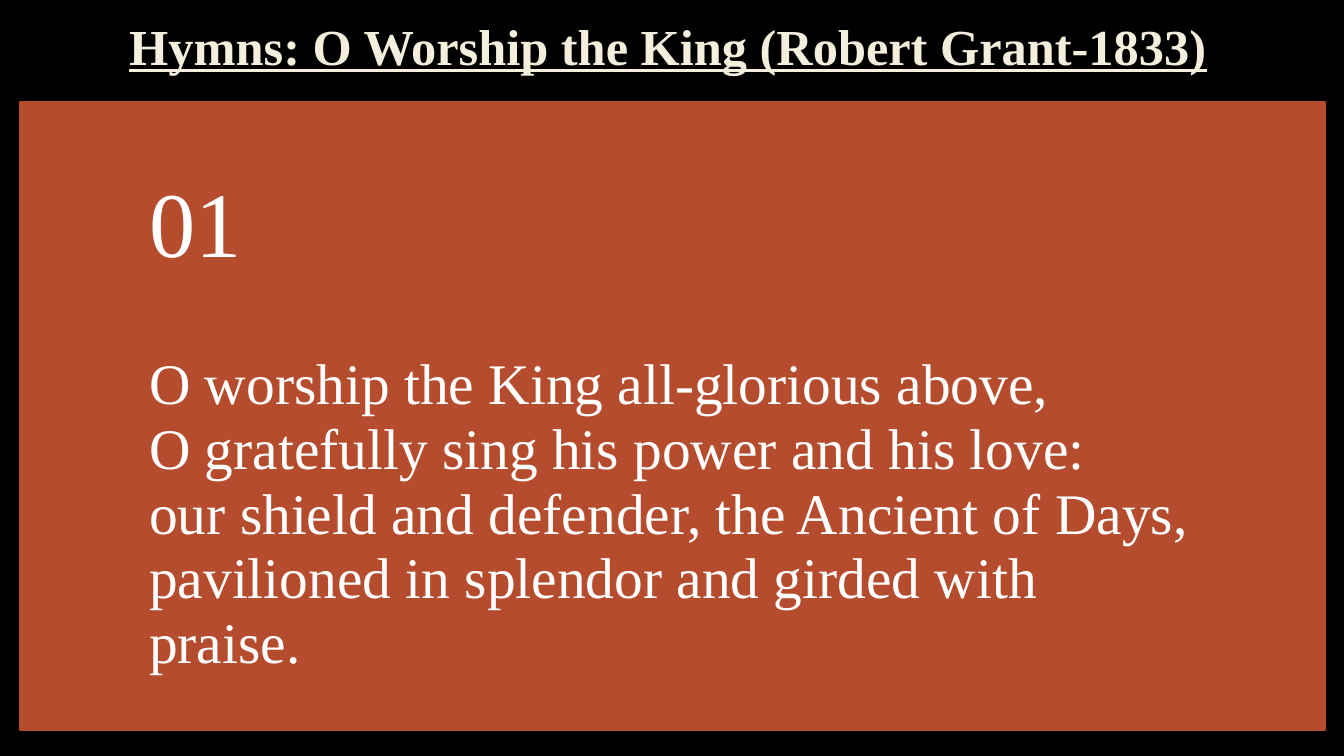
from dataclasses import dataclass

from pptx import Presentation
from pptx.dml.color import RGBColor
from pptx.enum.shapes import MSO_SHAPE
from pptx.enum.text import MSO_ANCHOR, PP_ALIGN
from pptx.util import Inches, Pt

RECTANGLE = MSO_SHAPE.RECTANGLE
TOP, MIDDLE = MSO_ANCHOR.TOP, MSO_ANCHOR.MIDDLE
LEFT, CENTER = PP_ALIGN.LEFT, PP_ALIGN.CENTER

SLIDE_W, SLIDE_H = 13.33, 7.5
PANEL_X, PANEL_Y, PANEL_W, PANEL_H = 0.2, 1.01, 12.94, 6.23
NUMBER_H = PANEL_H * 0.4
VERSE_H = PANEL_H - NUMBER_H
SIDE_INSET = 1.28

TITLE = "Hymns: O Worship the King (Robert Grant-1833)"
VERSE_NUMBER = "01"
VERSE = "\v".join([
    "O worship the King all-glorious above,",
    "O gratefully sing his power and his love:",
    "our shield and defender, the Ancient of Days,",
    "pavilioned in splendor and girded with praise.",
])


@dataclass(frozen=True)
class Theme:
    background: RGBColor = RGBColor.from_string("000000")
    panel: RGBColor = RGBColor.from_string("B54C2D")
    title: RGBColor = RGBColor.from_string("F4EEDC")
    text: RGBColor = RGBColor.from_string("FFFFFF")
    font: str = "Times New Roman"
    title_size: int = 36
    number_size: int = 66
    verse_size: int = 41


THEME = Theme()


def set_all(target, values):
    for name, value in values.items():
        setattr(target, name, value)


def add_panel(shapes, x, y, w, h):
    s = shapes.add_shape(RECTANGLE, Inches(x), Inches(y), Inches(w), Inches(h))
    s.shadow.inherit = False
    s.fill.solid()
    s.fill.fore_color.rgb = THEME.panel
    s.line.color.rgb = THEME.panel
    s.line.width = Pt(1.25)


def add_text(shapes, text, box, size, color, insets, anchor=MIDDLE,
             align=LEFT, spacing=0.9, **font):
    """Add one paragraph; box is x, y, w, h and insets are l, t, r, b in inches."""
    s = shapes.add_textbox(*map(Inches, box))
    tf = s.text_frame
    sides = ("margin_left", "margin_top", "margin_right", "margin_bottom")
    set_all(tf, dict(zip(sides, map(Inches, insets))))
    set_all(tf, {"word_wrap": True, "vertical_anchor": anchor})
    p = tf.paragraphs[0]
    p.text = text
    set_all(p, {"alignment": align, "line_spacing": spacing})
    for r in p.runs:
        set_all(r.font, {"name": THEME.font, "size": Pt(size), **font})
        r.font.color.rgb = color


def main():
    prs = Presentation()
    prs.slide_width, prs.slide_height = Inches(SLIDE_W), Inches(SLIDE_H)
    slide = prs.slides.add_slide(prs.slide_layouts[6])
    slide.background.fill.solid()
    slide.background.fill.fore_color.rgb = THEME.background

    add_text(slide.shapes, TITLE, (0.11, 0.09, 13.03, 0.79), THEME.title_size,
             THEME.title, (0.1, 0.05, 0.1, 0.05), align=CENTER,
             bold=True, underline=True)

    verse_card = slide.shapes.add_group_shape().shapes
    add_panel(verse_card, PANEL_X, PANEL_Y, PANEL_W, PANEL_H)
    add_text(verse_card, VERSE, (PANEL_X, PANEL_Y + NUMBER_H, PANEL_W, VERSE_H),
             THEME.verse_size, THEME.text, (SIDE_INSET, 0, SIDE_INSET, 0.36),
             anchor=TOP, spacing=0.94)
    add_text(verse_card, VERSE_NUMBER, (PANEL_X, PANEL_Y, PANEL_W, NUMBER_H),
             THEME.number_size, THEME.text, (SIDE_INSET, 0.18, SIDE_INSET, 0.18))

    prs.save("out.pptx")


if __name__ == "__main__":
    main()
